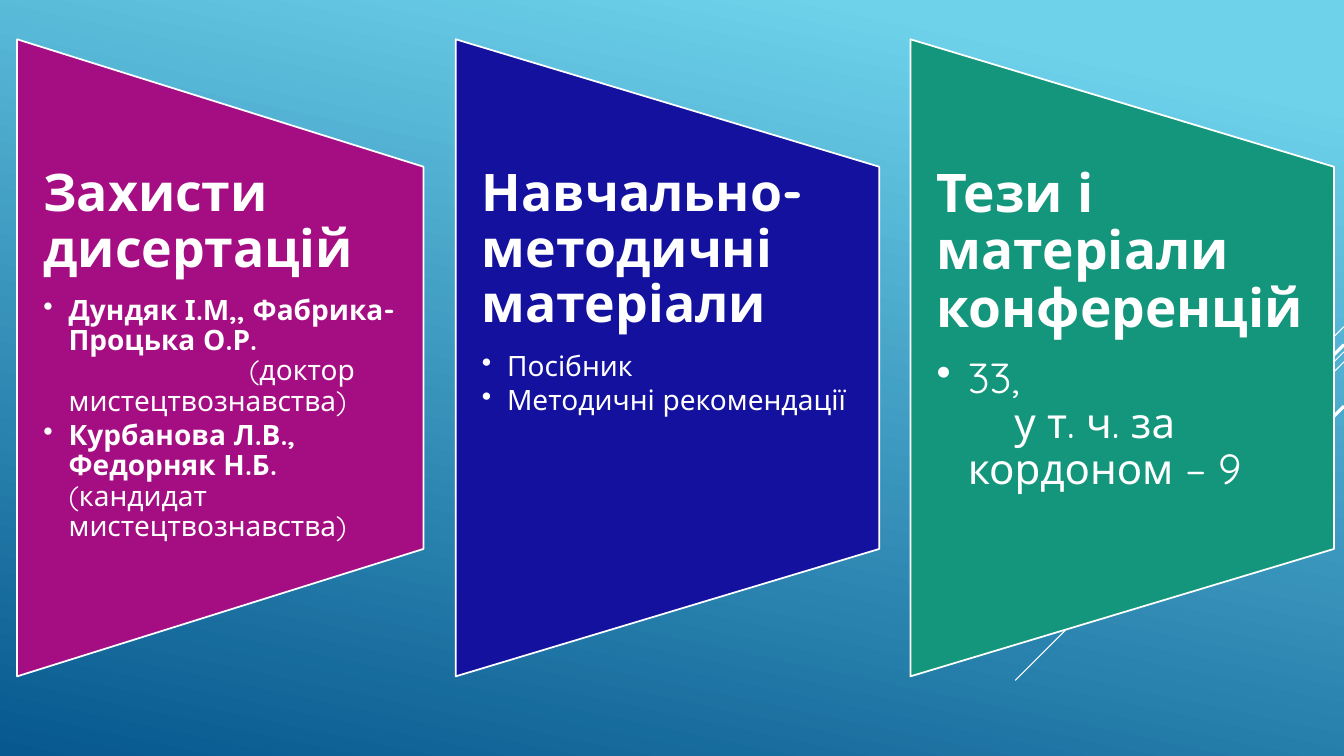
from lxml import etree
from pptx import Presentation
from pptx import util as u
from pptx.dml.color import RGBColor
from pptx.enum import shapes, text
from pptx.oxml.ns import qn

WHITE = RGBColor(0xFF, 0xFF, 0xFF)
SKY = RGBColor(0x6E, 0xD2, 0xEB)
DEEP = RGBColor(0x06, 0x58, 0x8E)
MAGENTA = RGBColor(0xA5, 0x0E, 0x82)
NAVY = RGBColor(0x13, 0x11, 0x9D)
GREEN = RGBColor(0x14, 0x96, 0x7C)

SLIDE_W, SLIDE_H = 13.33, 7.5
PANEL_TOP, PANEL_H = 0.39, 6.32
TEXT_TOP, TEXT_H = 1.65, 3.79

# Right-edge height, horizontal run, weight
STREAKS = [(3.24, 1.0, 0.75), (3.49, 3.26, 0.75), (3.59, 2.07, 0.75),
           (3.42, 1.91, 2.25), (4.03, 1.39, 2.25)]

# Left, width, colour, heading, heading size, body size, indent, tab stop,
# bullet items; the first run of an item is bold where the flag is set
PANELS = [
    (0.17, 4.03, MAGENTA, "Захисти дисертацій", 37, 20, 0.25, 2.04, True,
     ["Дундяк І.М,, Фабрика-Процька О.Р.\v\t(доктор мистецтвознавства)",
      "Курбанова Л.В., Федорняк Н.Б.\v(кандидат мистецтвознавства)"]),
    (4.52, 4.2, NAVY, "Навчально-методичні матеріали", 37, 20, 0.25, None, False,
     ["Посібник", "Методичні рекомендації"]),
    (9.03, 4.2, GREEN, "Тези і матеріали конференцій", 38, 30, 0.31, 0.77, False,
     ["33,\v\tу т. ч. за кордоном – 9"]),
]


class Deck:
    def __init__(self, font):
        self.font = font
        self.prs = Presentation()
        self.prs.slide_width = u.Inches(SLIDE_W)
        self.prs.slide_height = u.Inches(SLIDE_H)
        self.s = self.prs.slides.add_slide(self.prs.slide_layouts[6])

    def background(self, start, end):
        fill = self.s.background.fill
        fill.gradient()
        fill.gradient_angle = 258
        for stop, color, pos in zip(fill.gradient_stops, (start, end), (0.1, 1)):
            stop.color.rgb = color
            stop.position = pos

    def streak(self, y, run, weight):
        """Draw a 45° line from the right edge down to the left."""
        line = self.s.shapes.add_connector(
            shapes.MSO_CONNECTOR.STRAIGHT, u.Inches(SLIDE_W), u.Inches(y),
            u.Inches(SLIDE_W - run), u.Inches(y + run))
        line.line.color.rgb = WHITE
        line.line.width = u.Pt(weight)
        etree.SubElement(line._element.spPr, qn("a:effectLst"))

    def panel(self, x, w, color):
        """Draw a trapezoid turned on its side, tall edge on the left."""
        left = x + (w - PANEL_H) / 2
        top = PANEL_TOP + (PANEL_H - w) / 2
        sp = self.s.shapes.add_shape(
            shapes.MSO_SHAPE.FLOWCHART_MANUAL_OPERATION, u.Inches(left),
            u.Inches(top), u.Inches(PANEL_H), u.Inches(w))
        sp.rotation = 270
        sp.shadow.inherit = False
        sp.fill.solid()
        sp.fill.fore_color.rgb = color
        sp.line.color.rgb = WHITE
        sp.line.width = u.Pt(1.25)

    def text(self, x, w, heading, head_size, size, indent, tab, bold, items):
        sp = self.s.shapes.add_textbox(u.Inches(x), u.Inches(TEXT_TOP),
                                       u.Inches(w), u.Inches(TEXT_H))
        tf = sp.text_frame
        tf.word_wrap = True
        tf.vertical_anchor = text.MSO_ANCHOR.TOP
        tf.margin_left = tf.margin_right = u.Inches(0.26)
        tf.margin_top = tf.margin_bottom = 0
        self.paragraph(tf.paragraphs[0], heading, head_size, True, 0.35)
        for item in items:
            p = tf.add_paragraph()
            self.paragraph(p, item, size, bold, 0.15)
            self.bullet(p, indent, tab)

    def paragraph(self, p, content, size, bold, after):
        p.text = content
        p.line_spacing = 0.9
        p.space_after = u.Pt(size * after)
        for i, r in enumerate(p.runs):
            r.font.name = self.font
            r.font.size = u.Pt(size)
            r.font.color.rgb = WHITE
            r.font.bold = bold and i == 0

    def bullet(self, p, indent, tab):
        pPr = p._p.get_or_add_pPr()
        pPr.set("marL", str(u.Inches(indent)))
        pPr.set("indent", str(-u.Inches(indent)))
        etree.SubElement(pPr, qn("a:buChar"), char="•")
        if tab:
            tabs = etree.SubElement(pPr, qn("a:tabLst"))
            etree.SubElement(tabs, qn("a:tab"), pos=str(u.Inches(tab)), algn="l")


def main():
    deck = Deck("Quicksand")
    deck.background(SKY, DEEP)
    for streak in STREAKS:
        deck.streak(*streak)
    for x, w, color, *content in PANELS:
        deck.panel(x, w, color)
        deck.text(x, w, *content)
    deck.prs.save("out.pptx")


if __name__ == "__main__":
    main()
